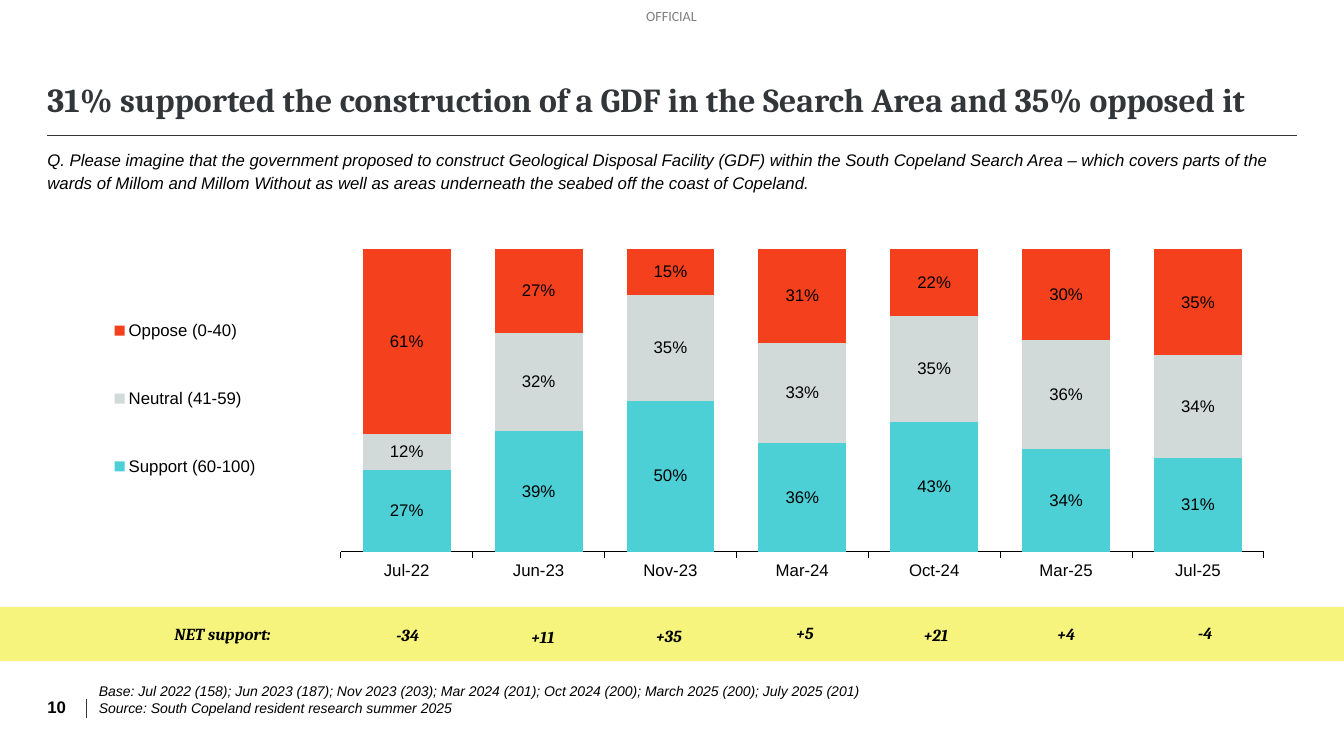
import pptx
import pptx.chart.data
import pptx.dml.color
import pptx.enum.chart
import pptx.enum.shapes
import pptx.enum.text
import pptx.oxml
import pptx.oxml.ns
import pptx.util

PX = 9144  # 100 px to the inch
INK, BLACK = "323638", "000000"
ANCHOR = pptx.enum.text.MSO_ANCHOR
ALIGN = pptx.enum.text.PP_ALIGN

WAVES = ["Jul-22", "Jun-23", "Nov-23", "Mar-24", "Oct-24", "Mar-25", "Jul-25"]
OPINIONS = [
    ("Support (60-100)", "4DCFD6", [0.27, 0.39, 0.5, 0.36, 0.43, 0.34, 0.31]),
    ("Neutral (41-59)", "D1D9D9", [0.12, 0.32, 0.35, 0.33, 0.35, 0.36, 0.34]),
    ("Oppose (0-40)", "F5401E", [0.61, 0.27, 0.15, 0.31, 0.22, 0.3, 0.35]),
]
# Net score, with its left and top offset inside the band
NET_SCORES = [("-34", 369, 0), ("+11", 503, 2), ("+35", 628, 1), ("+5", 763, -2),
              ("+21", 893, 0), ("+4", 1022, -1), ("-4", 1160, -2)]


def px(length):
    return pptx.util.Emu(length * PX)


def rgb(hex_colour):
    return pptx.dml.color.RGBColor.from_string(hex_colour)


def style_font(font, size, face="Arial", colour=BLACK, bold=False, italic=False):
    font.size = pptx.util.Pt(size)
    font.name = face
    font.bold = bold
    font.italic = italic
    font.color.rgb = rgb(colour)


def fill_text(holder, lines, size, anchor=ANCHOR.TOP, align=ALIGN.LEFT,
              spacing=1.0, wrap=True, **look):
    frame = holder.text_frame
    frame.word_wrap = wrap
    frame.auto_size = pptx.enum.text.MSO_AUTO_SIZE.NONE
    frame.vertical_anchor = anchor
    frame.margin_left = frame.margin_right = frame.margin_top = frame.margin_bottom = 0
    for index, line in enumerate(lines):
        paragraph = frame.add_paragraph() if index else frame.paragraphs[0]
        paragraph.alignment = align
        paragraph.line_spacing = spacing
        run = paragraph.add_run()
        run.text = line
        style_font(run.font, size, **look)


def add_text(slide, box, lines, size, **options):
    holder = slide.shapes.add_textbox(*map(px, box))
    fill_text(holder, lines, size, **options)


def add_rule(slide, x1, y1, x2, y2, width):
    rule = slide.shapes.add_connector(
        pptx.enum.shapes.MSO_CONNECTOR.STRAIGHT, px(x1), px(y1), px(x2), px(y2))
    rule.line.color.rgb = rgb(INK)
    rule.line.width = pptx.util.Pt(width)
    rule._element.spPr.append(pptx.oxml.parse_xml(
        f"<a:effectLst {pptx.oxml.ns.nsdecls('a')}/>"))


def manual_layout(x, y, w, h, inner=False):
    target = '<c:layoutTarget val="inner"/>' if inner else ""
    sizes = "".join(f'<c:{tag} val="{value}"/>'
                    for tag, value in (("x", x), ("y", y), ("w", w), ("h", h)))
    return pptx.oxml.parse_xml(
        f"<c:layout {pptx.oxml.ns.nsdecls('c')}><c:manualLayout>{target}"
        f'<c:xMode val="edge"/><c:yMode val="edge"/>{sizes}'
        "</c:manualLayout></c:layout>")


def add_heading(slide, left, top, width):
    add_text(slide, (left + 594, top, 53, 17), ["OFFICIAL"], 10, wrap=False,
             face="Calibri", colour="7F7F7F")
    title = slide.shapes.title
    title.left, title.top, title.width, title.height = map(px, (left, top + 58, 1202, 54))
    fill_text(title, ["31% supported the construction of a GDF in the Search Area "
                      "and 35% opposed it"],
              24, anchor=ANCHOR.BOTTOM, spacing=0.9, face="Cambria", colour=INK, bold=True)
    add_rule(slide, left, top + 127, left + width, top + 127, 0.75)
    add_text(slide, (left, top + 139, 1235, 32),
             ["Q. Please imagine that the government proposed to construct Geological "
              "Disposal Facility (GDF) within the South Copeland Search Area – which covers "
              "parts of the wards of Millom and Millom Without as well as areas underneath "
              "the seabed off the coast of Copeland."],
             12, spacing=1.13, italic=True)


def add_opinion_chart(slide, box):
    opinion_data = pptx.chart.data.CategoryChartData(number_format="0%")
    opinion_data.categories = WAVES
    for name, _, shares in OPINIONS:
        opinion_data.add_series(name, shares)
    chart = slide.shapes.add_chart(
        pptx.enum.chart.XL_CHART_TYPE.COLUMN_STACKED_100, *map(px, box), opinion_data).chart
    style_font(chart.font, 10)
    chart.has_title = False

    # Columns and their labels
    columns = chart.plots[0]
    columns.gap_width = 50
    columns.overlap = 100
    columns.vary_by_categories = False
    for series, (_, colour, _) in zip(columns.series, OPINIONS):
        series.format.fill.solid()
        series.format.fill.fore_color.rgb = rgb(colour)
        labels = series.data_labels
        labels.show_value = True
        labels.number_format = "0%"
        labels.number_format_is_linked = False
        labels.position = pptx.enum.chart.XL_LABEL_POSITION.CENTER
        style_font(labels.font, 12)

    # Axes
    shares_axis = chart.value_axis
    shares_axis.visible = False
    shares_axis.has_major_gridlines = False
    shares_axis.major_unit = 0.25
    waves_axis = chart.category_axis
    waves_axis.major_tick_mark = pptx.enum.chart.XL_TICK_MARK.OUTSIDE
    waves_axis.format.line.color.rgb = rgb(BLACK)
    waves_axis.format.line.width = pptx.util.Pt(0.75)
    style_font(waves_axis.tick_labels.font, 12)

    # Legend and plot area
    chart.has_legend = True
    legend = chart.legend
    legend.position = pptx.enum.chart.XL_LEGEND_POSITION.LEFT
    legend.include_in_layout = False
    style_font(legend.font, 12)
    legend_xml = legend._element
    legend_xml.find(pptx.oxml.ns.qn("c:legendPos")).addnext(
        manual_layout(0.04, 0.1, 0.14, 0.73))
    plot_xml = chart._chartSpace.chart.plotArea
    for layout in plot_xml.findall(pptx.oxml.ns.qn("c:layout")):
        plot_xml.remove(layout)
    plot_xml.insert(0, manual_layout(0.235, 0.036, 0.742, 0.87, inner=True))


def add_net_band(slide, left, top, width, height):
    band = slide.shapes.add_shape(pptx.enum.shapes.MSO_SHAPE.RECTANGLE,
                                  *map(px, (left, top, width, height)))
    band.shadow.inherit = False
    band.fill.solid()
    band.fill.fore_color.rgb = rgb("F6F47C")
    band.line.fill.background()
    look = dict(face="Cambria", bold=True, italic=True)
    add_text(slide, (left + 173, top + 14, 144, 21), ["NET support:"], 12,
             spacing=1.13, **look)
    for score, x, dy in NET_SCORES:
        add_text(slide, (left + x, top + dy, 71, height), [score], 12,
                 anchor=ANCHOR.MIDDLE, align=ALIGN.CENTER, spacing=1.12, **look)


def add_footer(slide, left, top, height):
    add_text(slide, (left, top, 31, height), ["10"], 12, anchor=ANCHOR.BOTTOM, bold=True)
    add_rule(slide, left + 39, top + 18, left + 39, top + height + 1, 0.5)
    add_text(slide, (left + 51, top, 781, height),
             ["Base: Jul 2022 (158); Jun 2023 (187); Nov 2023 (203); Mar 2024 (201); "
              "Oct 2024 (200); March 2025 (200); July 2025 (201)",
              "Source: South Copeland resident research summer 2025"],
             10, anchor=ANCHOR.BOTTOM, italic=True)


def main():
    deck = pptx.Presentation()
    deck.slide_width, deck.slide_height = px(1333), px(750)
    slide = deck.slides.add_slide(deck.slide_layouts[5])
    add_heading(slide, 47, 7, 1239)
    add_opinion_chart(slide, (48, 235, 1234, 345))
    add_net_band(slide, 0, 602, 1333, 54)
    add_footer(slide, 47, 675, 36)
    deck.save("out.pptx")


if __name__ == "__main__":
    main()
